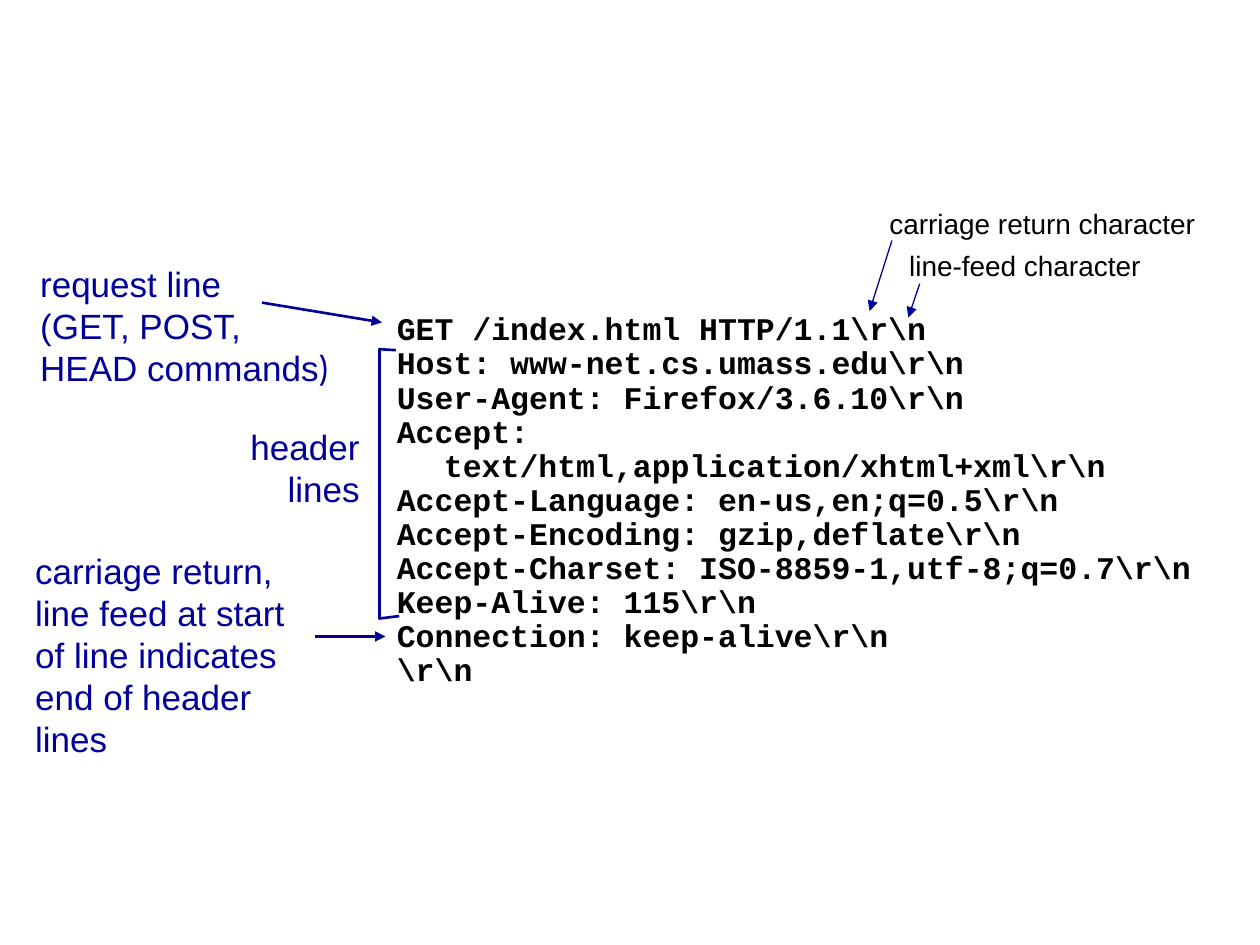
from lxml.etree import SubElement
from pptx import Presentation
from pptx.dml.color import RGBColor
from pptx.enum.shapes import MSO_CONNECTOR
from pptx.enum.text import PP_ALIGN
from pptx.oxml.ns import qn
from pptx.util import Cm, Pt

NAVY = "000099"
BLACK = "000000"
HANGING = 0.95
REQUEST = r"""GET /index.html HTTP/1.1\r\n
Host: www-net.cs.umass.edu\r\n
User-Agent: Firefox/3.6.10\r\n
Accept: text/html,application/xhtml+xml\r\n
Accept-Language: en-us,en;q=0.5\r\n
Accept-Encoding: gzip,deflate\r\n
Accept-Charset: ISO-8859-1,utf-8;q=0.7\r\n
Keep-Alive: 115\r\n
Connection: keep-alive\r\n
\r\n"""


def color(value):
    """Return the colour for a hex string."""
    return RGBColor.from_string(value)


def format_run(run, size, fill, font="Arial", bold=False):
    """Set the font of one run."""
    run.font.name = font
    run.font.size = Pt(size)
    run.font.bold = bold
    run.font.color.rgb = color(fill)


def add_text(slide, box, text, size=20, fill=NAVY, font="Arial", bold=False,
             align=PP_ALIGN.LEFT, hanging=0, spacing=1.0):
    """Add a wrapped text box and return its text frame."""
    shape = slide.shapes.add_textbox(*(Cm(length) for length in box))
    text_frame = shape.text_frame
    text_frame.word_wrap = True
    text_frame.text = text
    for paragraph in text_frame.paragraphs:
        paragraph.alignment = align
        paragraph.line_spacing = spacing
        if hanging:
            properties = paragraph._p.get_or_add_pPr()
            properties.set("marL", str(Cm(hanging)))
            properties.set("indent", str(-Cm(hanging)))
        for run in paragraph.runs:
            format_run(run, size, fill, font, bold)
    return text_frame


def add_arrow(slide, start, end, width):
    """Add a navy line with an arrowhead at its end."""
    points = [Cm(length) for length in (*start, *end)]
    connector = slide.shapes.add_connector(MSO_CONNECTOR.STRAIGHT, *points)
    connector.line.color.rgb = color(NAVY)
    connector.line.width = Pt(width)
    SubElement(connector.line._get_or_add_ln(), qn("a:tailEnd"), type="triangle")
    SubElement(connector._element.spPr, qn("a:effectLst"))


def add_bracket(slide, points):
    """Add an open navy outline through the points."""
    start, *others = [(Cm(x), Cm(y)) for x, y in points]
    builder = slide.shapes.build_freeform(*start)
    builder.add_line_segments(others, close=False)
    shape = builder.convert_to_shape()
    shape.shadow.inherit = False
    shape.fill.background()
    shape.line.color.rgb = color(NAVY)
    shape.line.width = Pt(1.5)


def main():
    """Build the annotated HTTP request slide."""
    presentation = Presentation()
    presentation.slide_width = Cm(25.4)
    presentation.slide_height = Cm(19.05)
    slide = presentation.slides.add_slide(presentation.slide_layouts[6])

    request_label = add_text(slide, (0.56, 5.16, 6.35, 2.79),
                             "request line\n(GET, POST,\nHEAD commands")
    closing_run = request_label.paragraphs[-1].add_run()
    closing_run.text = ")"
    format_run(closing_run, 20, NAVY, "Cabin")
    add_arrow(slide, (5.28, 6.1), (7.7, 6.5), 1.5)

    add_bracket(slide, [(7.98, 7.06), (7.65, 7.04), (7.65, 12.47), (8.05, 12.42)])
    add_text(slide, (4.78, 8.46, 2.72, 1.96), "header\nlines", align=PP_ALIGN.RIGHT)

    add_arrow(slide, (6.35, 12.83), (7.77, 12.83), 1.5)
    add_text(slide, (0.46, 10.95, 6.45, 3.63),
             "carriage return,\nline feed at start\nof line indicates\nend of header lines")

    add_text(slide, (7.75, 6.2, 16.81, 7.14), REQUEST, 18, BLACK, "Courier New",
             bold=True, hanging=HANGING, spacing=0.9)

    add_arrow(slide, (17.98, 4.85), (17.53, 6.27), 0.75)
    for box, label in (((17.68, 4.04, 6.71, 0.94), "carriage return character"),
                       ((18.08, 4.88, 5.18, 0.94), "line-feed character")):
        add_text(slide, box, label, 16, BLACK, hanging=HANGING)
    add_arrow(slide, (18.54, 5.72), (18.31, 6.4), 0.75)

    presentation.save("out.pptx")


if __name__ == "__main__":
    main()
